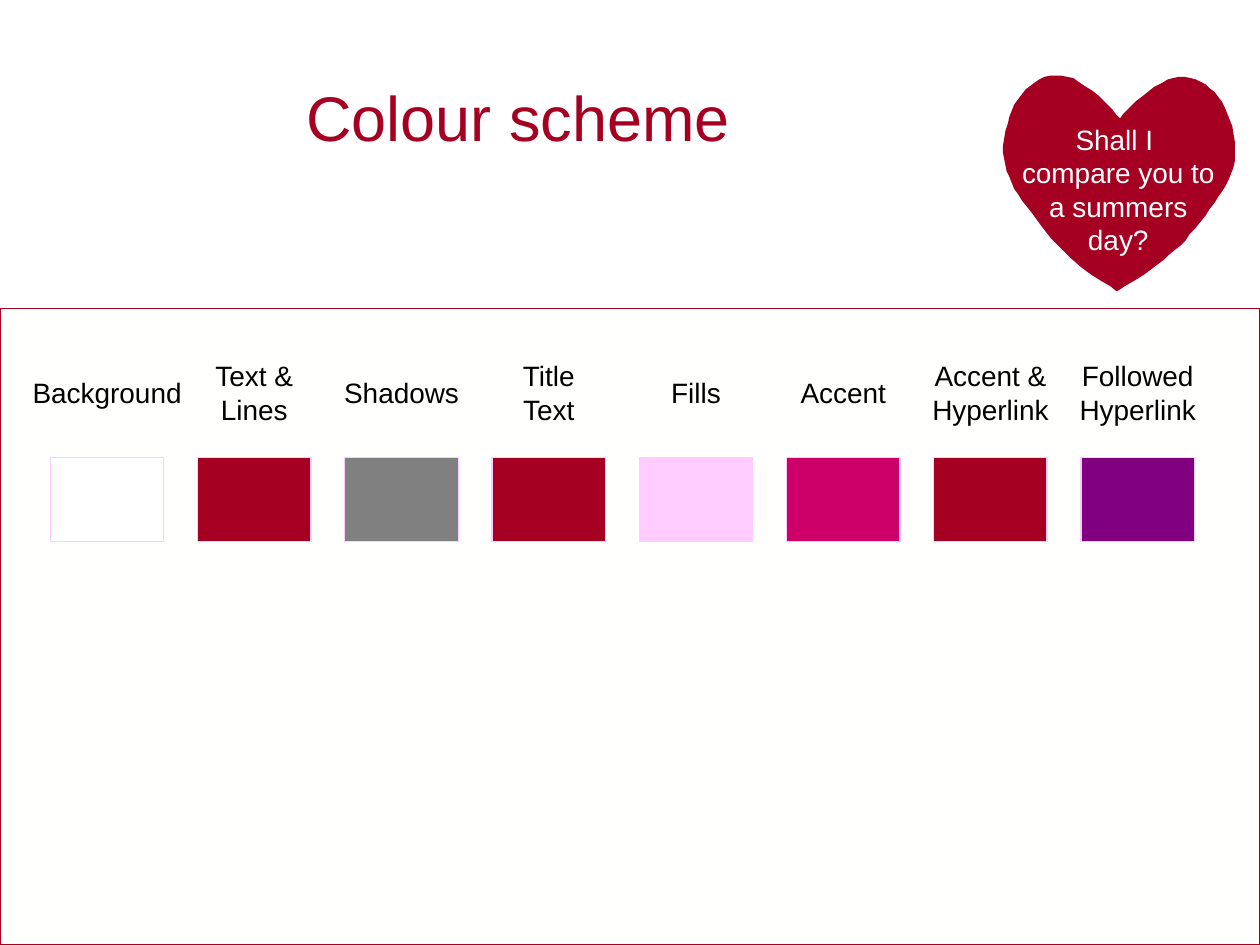
from pptx import Presentation
from pptx.dml.color import RGBColor
from pptx.enum import shapes, text
from pptx.util import Inches, Pt

CRIMSON, PINK, WHITE, BLACK = "A50021", "FFCCFF", "FFFFFF", "000000"

# Label, label width in inches, swatch colour
SCHEME = [
    ("Background", 1.39, WHITE),
    ("Text &\nLines", 0.84, CRIMSON),
    ("Shadows", 1.12, "808080"),
    ("Title\vText", 0.64, CRIMSON),
    ("Fills", 0.62, PINK),
    ("Accent", 0.89, "CC0066"),
    ("Accent &\nHyperlink", 1.14, CRIMSON),
    ("Followed\nHyperlink", 1.14, "800080"),
]

# Hundredths of an inch from the heart's top left corner
HEART = [
    (4, 38), (5, 33), (7, 28), (9, 23), (12, 19), (15, 15), (18, 11), (22, 8),
    (26, 5), (29, 3), (33, 1), (38, 0), (42, 0), (46, 0), (51, 1), (56, 2),
    (60, 5), (66, 9), (71, 12), (76, 16), (80, 20), (84, 24), (87, 27),
    (90, 31), (93, 34), (95, 31), (98, 28), (102, 24), (106, 20), (110, 17),
    (115, 13), (120, 9), (126, 6), (131, 3), (135, 2), (140, 1), (144, 1),
    (149, 2), (153, 3), (157, 5), (161, 7), (164, 10), (168, 13), (171, 17),
    (174, 21), (176, 25), (178, 30), (180, 35), (182, 40), (183, 46),
    (184, 52), (184, 58), (184, 63), (184, 68), (183, 73), (181, 78),
    (179, 83), (177, 87), (174, 92), (171, 96), (168, 101), (164, 106),
    (161, 111), (152, 122), (148, 126), (145, 131), (141, 135), (137, 138),
    (132, 142), (128, 146), (120, 152), (112, 158), (104, 163), (97, 167),
    (91, 171), (90, 171), (85, 167), (78, 163), (70, 158), (62, 152),
    (54, 145), (46, 137), (38, 129), (31, 120), (23, 109), (19, 104),
    (15, 99), (12, 94), (9, 90), (7, 85), (5, 80), (3, 76), (2, 71), (1, 66),
    (0, 61), (0, 56), (1, 50), (2, 44),
]


def colour(value):
    return RGBColor.from_string(value)


def paint(shape, fill, line=None):
    shape.shadow.inherit = False
    shape.fill.solid()
    shape.fill.fore_color.rgb = colour(fill)
    if line:
        shape.line.color.rgb = colour(line)
        shape.line.width = Pt(0.75)
    else:
        shape.line.fill.background()


def add_rectangle(slide, left, top, width, height, fill, line):
    shape = slide.shapes.add_shape(
        shapes.MSO_SHAPE.RECTANGLE,
        Inches(left), Inches(top), Inches(width), Inches(height))
    paint(shape, fill, line)


def add_text(slide, left, top, width, height, wording, size, ink, **frame_format):
    box = slide.shapes.add_textbox(
        Inches(left), Inches(top), Inches(width), Inches(height))
    frame = box.text_frame
    frame.text = wording
    for name, value in {"word_wrap": True, **frame_format}.items():
        setattr(frame, name, value)
    font_format = {"name": "Arial", "size": Pt(size)}
    for paragraph in frame.paragraphs:
        paragraph.alignment = text.PP_ALIGN.CENTER
        for run in paragraph.runs:
            for name, value in font_format.items():
                setattr(run.font, name, value)
            run.font.color.rgb = colour(ink)


def add_heart(slide, left, top):
    builder = slide.shapes.build_freeform(*HEART[0], scale=Inches(0.01))
    builder.add_line_segments(HEART[1:], close=True)
    paint(builder.convert_to_shape(Inches(left), Inches(top)), CRIMSON)
    add_text(slide, left + 0.04, top + 0.32, 1.75, 0.85,
             "Shall I \vcompare you to a summers day?", 16, WHITE)


def add_title(slide, left, top, width, height):
    add_text(slide, left, top, width, height, "Colour scheme", 36, CRIMSON,
             vertical_anchor=text.MSO_ANCHOR.MIDDLE)


def add_scheme(slide, left, top, width, height):
    """Panel with a row of labelled swatches at an equal pitch."""
    add_rectangle(slide, left, top, width, height, "FFFFFE", CRIMSON)
    swatch_width, first_left, last_left = 0.9, left + 0.4, left + 8.58
    pitch = (last_left - first_left) / (len(SCHEME) - 1)
    label_middle = top + 0.67
    for index, (label, label_width, fill) in enumerate(SCHEME):
        swatch_left = first_left + index * pitch
        add_rectangle(slide, swatch_left, top + 1.18, swatch_width, 0.67, fill, PINK)
        label_height = 0.37 if label.isalpha() else 0.64
        label_left = swatch_left + (swatch_width - label_width) / 2
        add_text(slide, label_left, label_middle - label_height / 2,
                 label_width, label_height, label, 16, BLACK,
                 word_wrap=False, auto_size=text.MSO_AUTO_SIZE.SHAPE_TO_FIT_TEXT)


def main():
    presentation = Presentation()
    presentation.slide_width, presentation.slide_height = Inches(10), Inches(7.5)
    slide = presentation.slides.add_slide(presentation.slide_layouts[6])
    add_heart(slide, 7.96, 0.6)
    add_title(slide, 0.5, 0.3, 7.22, 1.25)
    add_scheme(slide, 0, 2.45, 10, 5.05)
    presentation.save("out.pptx")


if __name__ == "__main__":
    main()
